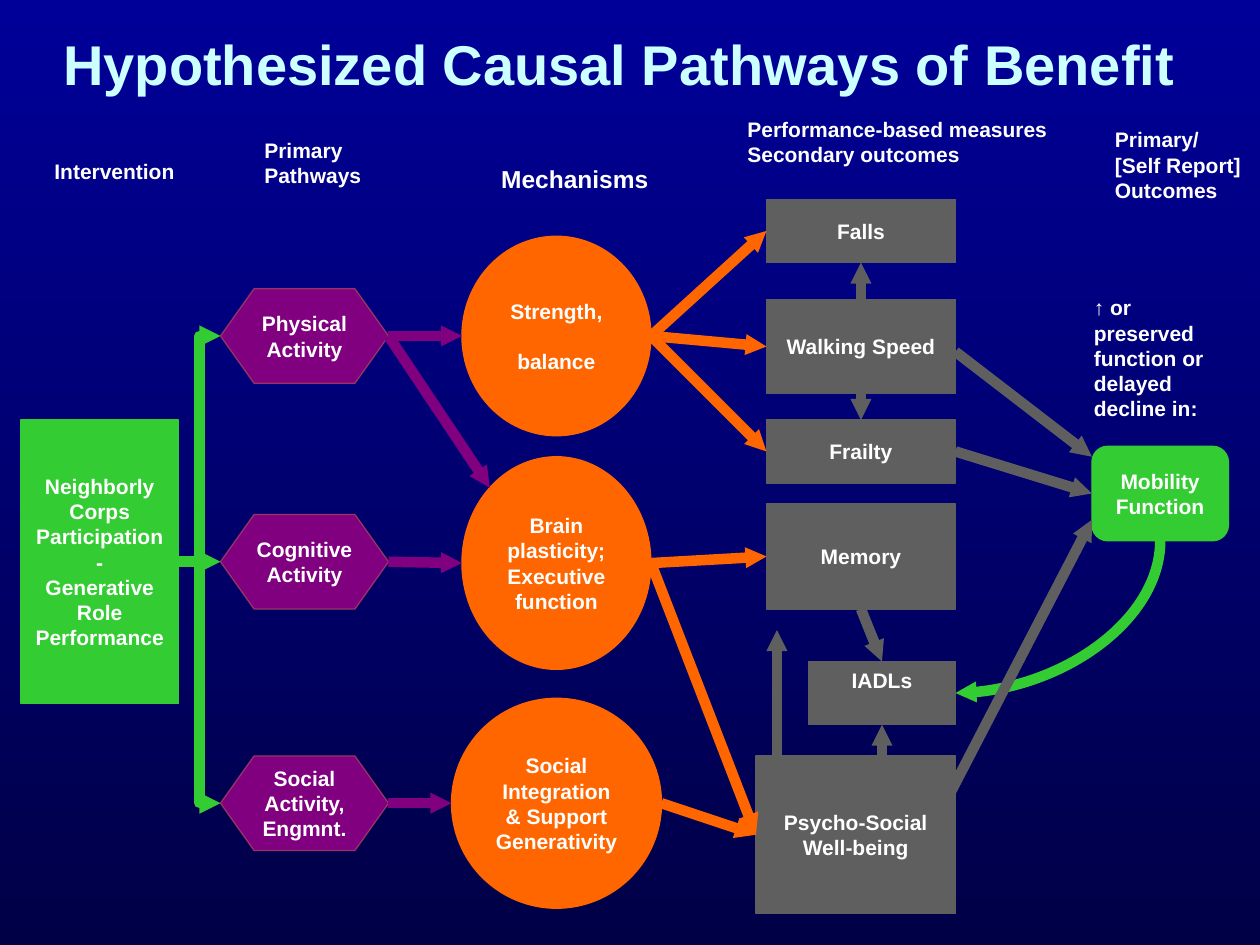
from lxml.etree import SubElement
from pptx import Presentation
from pptx.dml.color import RGBColor
from pptx.enum.shapes import MSO_CONNECTOR as LINK, MSO_SHAPE as SHAPE
from pptx.enum.text import MSO_ANCHOR as ANCHOR, PP_ALIGN as ALIGN
from pptx.oxml.ns import qn
from pptx.util import Inches, Pt

WHITE = RGBColor(0xFF, 0xFF, 0xFF)
PALE_CYAN = RGBColor(0xCC, 0xFF, 0xFF)
NAVY = RGBColor(0x00, 0x00, 0x99)
MIDNIGHT = RGBColor(0x00, 0x00, 0x47)
GREEN = RGBColor(0x33, 0xCC, 0x33)
PURPLE = RGBColor(0x80, 0x00, 0x80)
PLUM = RGBColor(0x99, 0x33, 0x66)
ORANGE = RGBColor(0xFF, 0x66, 0x00)
GRAY = RGBColor(0x5F, 0x5F, 0x5F)
TOP, LEFT, BOTTOM, RIGHT = range(4)

deck = Presentation()
deck.slide_width, deck.slide_height = Inches(10), Inches(7.5)
page = deck.slides.add_slide(deck.slide_layouts[5])

# The slide is a grid of 120 columns by 90 rows
CELL = deck.slide_width // 120


def grid(*cells):
    return [round(cell * CELL) for cell in cells]


def write(box, text, size=12, color=WHITE, align=ALIGN.CENTER, anchor=ANCHOR.MIDDLE):
    frame = box.text_frame
    frame.text = text
    frame.word_wrap = True
    frame.vertical_anchor = anchor
    for para in frame.paragraphs:
        para.alignment = align
        para.font.name = "Arial"
        para.font.size = Pt(size)
        para.font.bold = True
        para.font.color.rgb = color


# Background
backdrop = page.background.fill
backdrop.gradient()
backdrop.gradient_angle = 270
for stop, color in zip(backdrop.gradient_stops, (NAVY, MIDNIGHT)):
    stop.color.rgb = color
backdrop.gradient_stops[0].position = 0
backdrop.gradient_stops[1].position = 1

# Title
title = page.shapes.title
title.left, title.top, title.width, title.height = grid(1, 1, 116, 10)
write(title, "Hypothesized Causal Pathways of Benefit", 32, PALE_CYAN)

# Column headings and outcome note
headings = [
    ("Intervention", 12, (4, 14.5, 16, 4)),
    ("Primary Pathways", 12, (24, 12.5, 13, 7.5)),
    ("Mechanisms", 14, (46.55, 15, 17.5, 4.5)),
    ("Performance-based measures Secondary outcomes", 12, (70, 10.5, 33, 8.5)),
    ("Primary/\v[Self Report] Outcomes", 12, (105, 11.5, 15, 7.5)),
    ("↑ or preserved function or delayed decline in:", 12, (103, 27.5, 13, 7.5)),
]
for text, size, area in headings:
    write(page.shapes.add_textbox(*grid(*area)), text, size,
          align=ALIGN.LEFT, anchor=ANCHOR.TOP)

# Nodes, column by column
HEXAGON, ROUNDED = SHAPE.FLOWCHART_PREPARATION, SHAPE.FLOWCHART_ALTERNATE_PROCESS
nodes = [
    ("program", SHAPE.RECTANGLE, GREEN, (2, 40, 15, 27),
     "Neighborly Corps Participation-\nGenerative Role Performance"),
    ("physical", HEXAGON, PURPLE, (21, 27.5, 16, 9), "Physical Activity"),
    ("cognitive", HEXAGON, PURPLE, (21, 49, 16, 9), "Cognitive Activity"),
    ("social", HEXAGON, PURPLE, (21, 72, 16, 9), "Social Activity, Engmnt."),
    ("strength", SHAPE.OVAL, ORANGE, (44, 22.5, 18, 19), "Strength,\nbalance"),
    ("brain", SHAPE.OVAL, ORANGE, (44, 43.5, 18, 20.25),
     "Brain\nplasticity;\nExecutive function"),
    ("support", SHAPE.OVAL, ORANGE, (43, 66.5, 20, 20),
     "Social Integration & Support\nGenerativity"),
    ("falls", SHAPE.RECTANGLE, GRAY, (73, 19, 18, 6), "Falls"),
    ("walking", SHAPE.RECTANGLE, GRAY, (73, 28.5, 18, 9), "Walking Speed"),
    ("frailty", SHAPE.RECTANGLE, GRAY, (73, 40, 18, 6), "Frailty"),
    ("memory", SHAPE.RECTANGLE, GRAY, (73, 48, 18, 10), "Memory"),
    ("iadls", SHAPE.RECTANGLE, GRAY, (77, 63, 14, 6), "IADLs"),
    ("wellbeing", SHAPE.RECTANGLE, GRAY, (72, 72, 19, 15), "Psycho-Social Well-being"),
    ("mobility", ROUNDED, GREEN, (104, 42.5, 13, 9), "Mobility Function"),
]
node = {}
for name, kind, color, area, text in nodes:
    box = node[name] = page.shapes.add_shape(kind, *grid(*area))
    box.shadow.inherit = False
    box.fill.solid()
    box.fill.fore_color.rgb = color
    box.line.color.rgb = PLUM if kind == HEXAGON else color
    box.line.width = Pt(0.75)
    write(box, text, anchor=ANCHOR.TOP if name == "iadls" else ANCHOR.MIDDLE)
    if kind == HEXAGON:
        box.text_frame.margin_left = box.text_frame.margin_right = 0
node["strength"].text_frame.paragraphs[1].space_before = Pt(14)

# Arrows: each end is a grid point or a (node, side) joint
strength_out, brain_out = (62, 32), (62, 53.63)
program_out = (17, 53.5)
arrows = [
    (LINK.ELBOW, GREEN, program_out, (21, 32)),
    (LINK.ELBOW, GREEN, program_out, (21, 76.5)),
    (LINK.STRAIGHT, GREEN, ("program", RIGHT), ("cognitive", LEFT)),
    (LINK.STRAIGHT, PURPLE, ("social", RIGHT), (43, 76.5)),
    (LINK.STRAIGHT, PURPLE, ("cognitive", RIGHT), (44, 53.63)),
    (LINK.STRAIGHT, PURPLE, ("physical", RIGHT), (44, 32)),
    (LINK.STRAIGHT, PURPLE, ("physical", RIGHT), (46.65, 46.45)),
    (LINK.STRAIGHT, ORANGE, strength_out, ("falls", LEFT)),
    (LINK.STRAIGHT, ORANGE, strength_out, ("walking", LEFT)),
    (LINK.STRAIGHT, ORANGE, strength_out, ("frailty", LEFT)),
    (LINK.STRAIGHT, ORANGE, brain_out, ("memory", LEFT)),
    (LINK.STRAIGHT, ORANGE, (63, 76.5), ("wellbeing", LEFT)),
    (LINK.STRAIGHT, ORANGE, brain_out, ("wellbeing", LEFT)),
    (LINK.CURVE, GREEN, (110.5, 51.5), (91, 66)),
    (LINK.STRAIGHT, GRAY, ("walking", TOP), ("falls", BOTTOM)),
    (LINK.STRAIGHT, GRAY, ("walking", BOTTOM), ("frailty", TOP)),
    (LINK.STRAIGHT, GRAY, ("memory", BOTTOM), ("iadls", TOP)),
    (LINK.STRAIGHT, GRAY, (84, 72), ("iadls", BOTTOM)),
    (LINK.STRAIGHT, GRAY, (74, 72), (74, 60)),
    (LINK.STRAIGHT, GRAY, (91, 33.5), (104, 43.5)),
    (LINK.STRAIGHT, GRAY, ("frailty", RIGHT), ("mobility", LEFT)),
    (LINK.STRAIGHT, GRAY, (90, 76.5), (104, 49.5)),
]
for kind, color, start, end in arrows:
    points = [(0, 0) if joint[0] in node else joint for joint in (start, end)]
    arrow = page.shapes.add_connector(kind, *grid(*points[0], *points[1]))
    if start[0] in node:
        arrow.begin_connect(node[start[0]], start[1])
    if end[0] in node:
        arrow.end_connect(node[end[0]], end[1])
    arrow.line.color.rgb = color
    arrow.line.width = Pt(6)
    # A small head is shorter than the last leg of the elbows
    SubElement(arrow.line._get_or_add_ln(), qn("a:tailEnd"),
               type="triangle", w="sm", len="sm")
    properties = arrow._element.spPr
    SubElement(properties, qn("a:effectLst"))
    if kind == LINK.CURVE:
        # Quarter bend that leaves downward: swap the sides about the centre and turn
        (x1, y1), (x2, y2) = points
        across, down = abs(x2 - x1), abs(y2 - y1)
        arrow.left, arrow.top, arrow.width, arrow.height = grid(
            (x1 + x2 - down) / 2, (y1 + y2 - across) / 2, down, across)
        frame = properties.find(qn("a:xfrm"))
        frame.attrib.pop("flipH", None)
        frame.set("rot", str(90 * 60000))
        properties.find(qn("a:prstGeom")).set("prst", "curvedConnector2")

deck.save("out.pptx")
